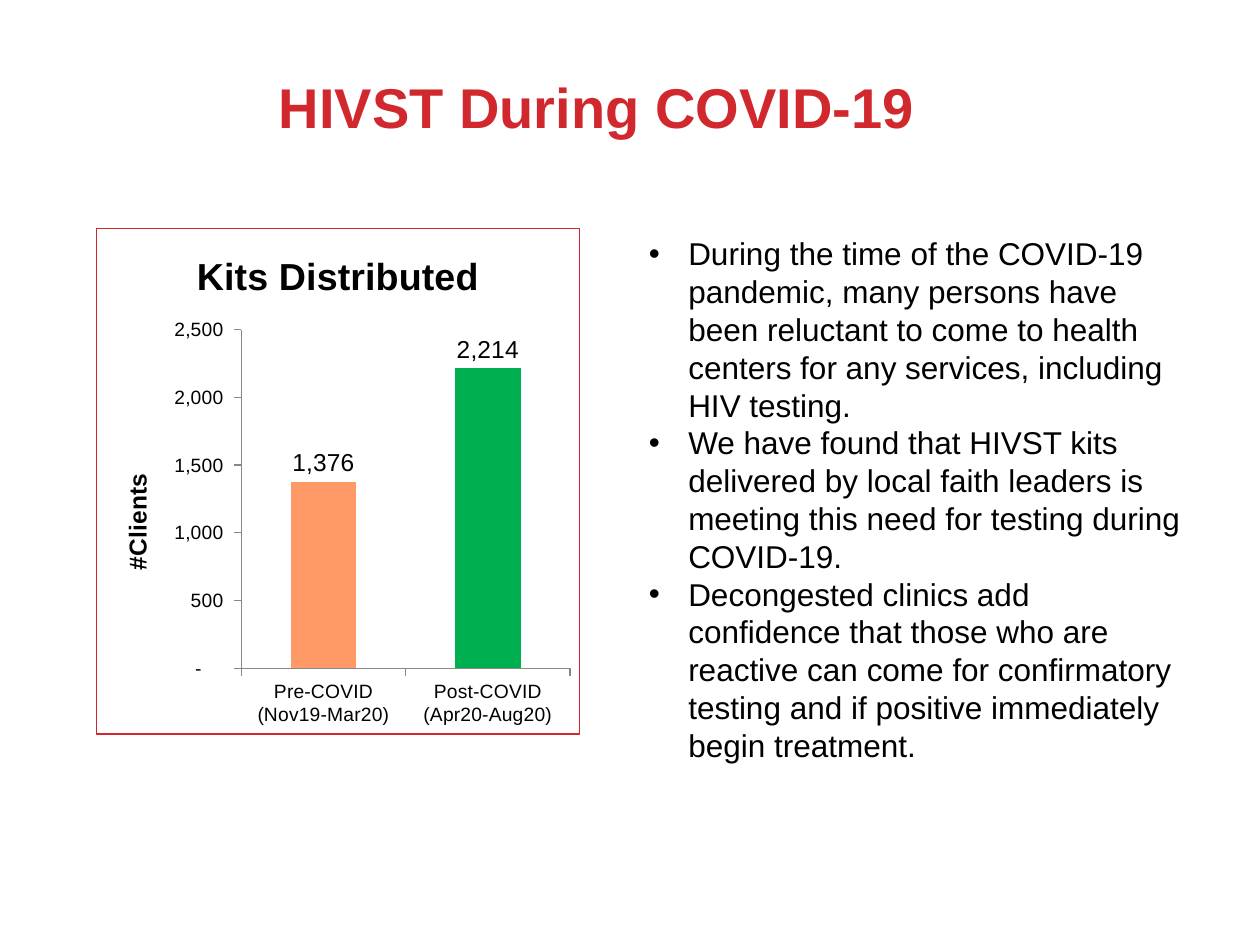
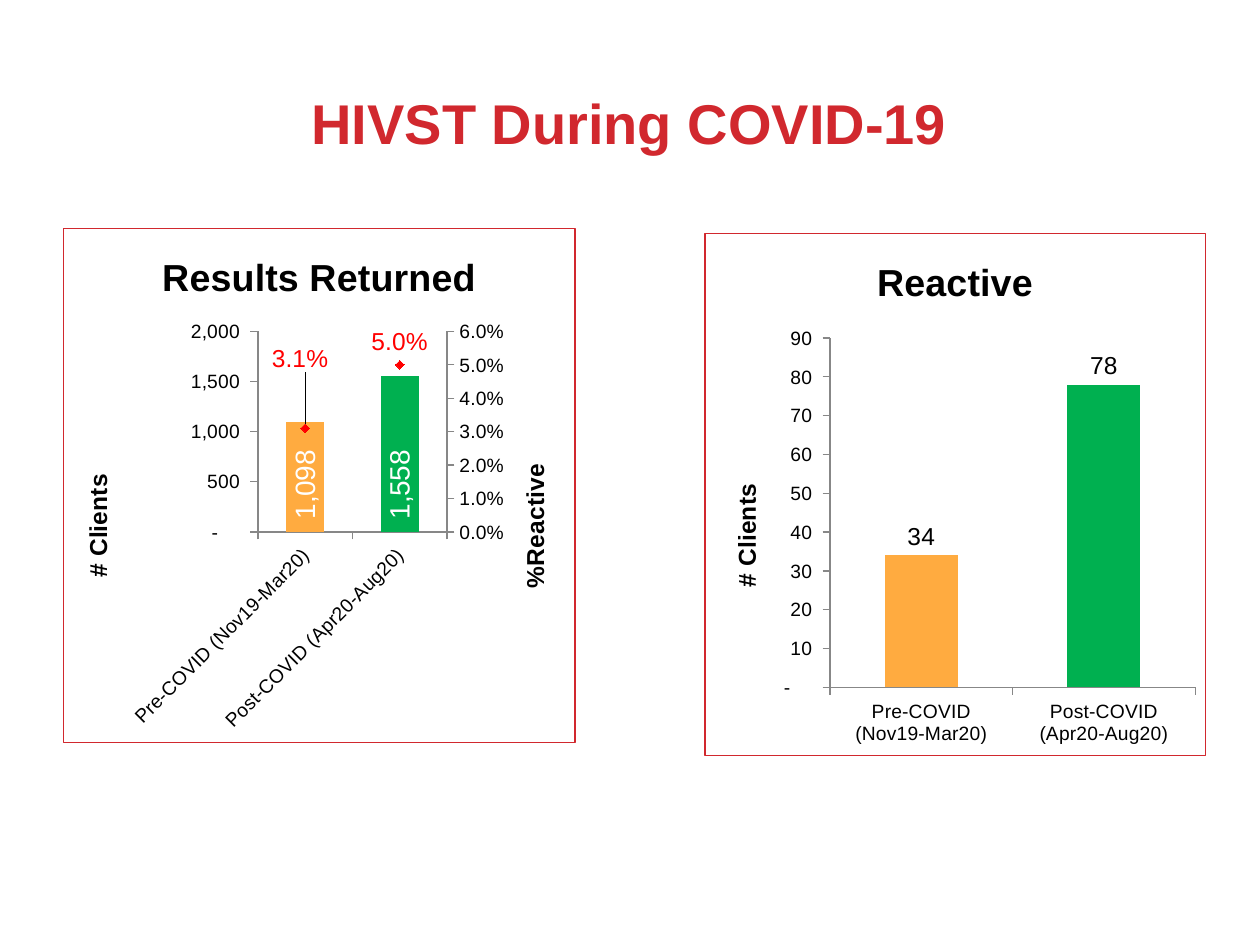
from copy import deepcopy
from pptx import Presentation
from pptx import util as u
from pptx.chart import axis as ax, data
from pptx.dml.color import RGBColor
from pptx.enum import chart as ch, text
from pptx.oxml import ns, parse_xml

Pt = u.Pt
RED = RGBColor(0xD1, 0x28, 0x2E)
ALERT = RGBColor(0xFF, 0, 0)
BLACK = RGBColor(0, 0, 0)
WHITE = RGBColor(255, 255, 255)
GRAY = RGBColor(0x87, 0x87, 0x87)
PEACH = RGBColor(0xFF, 0x99, 0x66)
AMBER = RGBColor(0xFF, 0xAB, 0x40)
GREEN = RGBColor(0, 0xB0, 0x50)
FACE = "Arial"
COUNT = '_(* #,##0_);_(* \\(#,##0\\);_(* "-"??_);_('
RATE = "0.0%"
TERMS = ["Pre-COVID (Nov19-Mar20)", "Post-COVID (Apr20-Aug20)"]
HEAD = "HIVST During COVID-19"
NOTES = [
    "During the time of the COVID-19 pandemic, many persons have been reluctant to come "
    "to health centers for any services, including HIV testing.",
    "We have found that HIVST kits delivered by local faith leaders is meeting this need "
    "for testing during COVID-19.",
    "Decongested clinics add confidence that those who are reactive can come for "
    "confirmatory testing and if positive immediately begin treatment.",
]


def put(item, **vals):
    for name, val in vals.items():
        setattr(item, name, val)


def tag(item, **vals):
    for name, val in vals.items():
        item.set(name, str(val))


def dress(font, size, color=BLACK, bold=False):
    put(font, name=FACE, size=Pt(size), bold=bold)
    font.color.rgb = color


def place(shape, box):
    put(shape, **dict(zip(("left", "top", "width", "height"), map(Pt, box))))


def node(name, body):
    return parse_xml(f'<c:{name} {ns.nsdecls("c", "a")}>{body}</c:{name}>')


def layout(**vals):
    parts = "".join(f'<c:{key} val="{val}"/>' for key, val in vals.items())
    return node("layout", f"<c:manualLayout>{parts}</c:manualLayout>")


def turn(item, deg):
    tag(item.xpath("./c:txPr/a:bodyPr")[0], rot=deg * 60000, vert="horz")


def name_axis(axis, title):
    frame = axis.axis_title.text_frame
    frame.text = title
    dress(frame.paragraphs[0].runs[0].font, 14, bold=True)


class Deck:
    """Holds the deck style and the current slide."""

    def __init__(self):
        self.prs = Presentation()
        put(self.prs, slide_width=Pt(720), slide_height=Pt(540))

    def add(self, kind, box):
        self.slide = self.prs.slides.add_slide(self.prs.slide_layouts[kind])
        title = self.slide.shapes.title
        place(title, box)
        frame = title.text_frame
        put(frame, text=HEAD, word_wrap=True, auto_size=text.MSO_AUTO_SIZE.NONE,
            vertical_anchor=text.MSO_ANCHOR.TOP, margin_left=Pt(7.2), margin_right=Pt(7.2),
            margin_top=Pt(7.2), margin_bottom=Pt(7.2))
        line = frame.paragraphs[0]
        line.alignment = text.PP_ALIGN.CENTER
        dress(line.runs[0].font, 32, RED, True)

    def body(self, items, box):
        holder = self.slide.placeholders[1]
        place(holder, box)
        frame = holder.text_frame
        put(frame, text="\n".join(items), word_wrap=True,
            auto_size=text.MSO_AUTO_SIZE.NONE, vertical_anchor=text.MSO_ANCHOR.TOP)
        for line in frame.paragraphs:
            put(line, space_before=Pt(0), line_spacing=Pt(21.6))
            tag(line._p.get_or_add_pPr(), marL=int(Pt(22.5)), indent=int(Pt(-22.5)))
            dress(line.runs[0].font, 18)

    def chart(self, name, vals, box, plot, label="# Clients", first=AMBER, rates=None):
        table = data.CategoryChartData()
        table.categories = TERMS
        table.add_series(name, vals, COUNT)
        if rates:
            table.add_series("Series 2", rates, RATE)
        chart = self.slide.shapes.add_chart(
            ch.XL_CHART_TYPE.COLUMN_CLUSTERED, *map(Pt, box), table).chart
        dress(chart.font, 18)
        put(chart, has_legend=False, has_title=True)
        frame = chart.chart_title.text_frame
        frame.text = name
        dress(frame.paragraphs[0].runs[0].font, 21.6, bold=True)
        self.border(chart)
        area = chart.element.xpath("//c:plotArea")[0]
        for old in area.xpath("./c:layout"):
            area.remove(old)
        x, y, w, h = plot
        area.insert(0, layout(layoutTarget="inner", xMode="edge", yMode="edge",
                              x=x, y=y, w=w, h=h))
        for axis in (chart.category_axis, chart.value_axis):
            put(axis, has_major_gridlines=False, major_tick_mark=ch.XL_TICK_MARK.OUTSIDE)
            dress(axis.tick_labels.font, 11)
            axis.format.line.color.rgb = GRAY
        put(chart.value_axis.tick_labels, number_format=COUNT, number_format_is_linked=False)
        name_axis(chart.value_axis, label)
        bars = chart.plots[0]
        put(bars, gap_width=150, vary_by_categories=False)
        tally = bars.series[0]
        for spot, color in enumerate((first, GREEN)):
            fill = tally.points[spot].format.fill
            fill.solid()
            fill.fore_color.rgb = color
        ends = ch.XL_LABEL_POSITION
        if rates:
            self.labels(tally, COUNT, ends.INSIDE_BASE, 16, WHITE)
            turn(tally.data_labels._element, -90)
            turn(chart.category_axis._element, -45)
            self.rates(chart, area)
        else:
            self.labels(tally, COUNT, ends.OUTSIDE_END, 14, BLACK)

    def border(self, chart):
        edge = node("spPr", f'<a:noFill/><a:ln w="{int(Pt(0.75))}"><a:solidFill>'
                            f'<a:srgbClr val="{RED}"/></a:solidFill></a:ln>')
        chart.element.xpath("./c:txPr")[0].addprevious(edge)

    def labels(self, series, form, spot, size, color):
        marks = series.data_labels
        put(marks, show_value=True, number_format=form, number_format_is_linked=False,
            position=spot)
        dress(marks.font, size, color)

    def rates(self, chart, area):
        ids = ("91", "92")
        line = node("lineChart", '<c:grouping val="standard"/><c:varyColors val="0"/>'
                    '<c:marker val="1"/>' + "".join(f'<c:axId val="{i}"/>' for i in ids))
        ser = area.xpath("./c:barChart/c:ser")[1]
        for flag in ser.xpath("./c:invertIfNegative"):
            ser.remove(flag)
        line.insert(2, ser)
        area.xpath("./c:barChart")[0].addnext(line)
        base, side = (deepcopy(axis._element)
                      for axis in (chart.category_axis, chart.value_axis))
        area.xpath("./c:valAx")[-1].addnext(side)
        side.addnext(base)
        for item, own, other in ((base, *ids), (side, *reversed(ids))):
            tag(item.xpath("./c:axId")[0], val=own)
            tag(item.xpath("./c:crossAx")[0], val=other)
        tag(base.xpath("./c:delete")[0], val=1)
        tag(side.xpath("./c:axPos")[0], val="r")
        tag(side.xpath("./c:crosses")[0], val="max")
        right = ax.ValueAxis(side)
        put(right.tick_labels, number_format=RATE, number_format_is_linked=False)
        name_axis(right, "%Reactive")
        share = chart.plots[1].series[0]
        share.smooth = False
        share.format.line.fill.background()
        put(share.marker, style=ch.XL_MARKER_STYLE.DIAMOND, size=5)
        look = share.marker.format
        look.fill.solid()
        look.fill.fore_color.rgb = ALERT
        look.line.color.rgb = ALERT
        above = ch.XL_LABEL_POSITION.ABOVE
        self.labels(share, RATE, above, 14, ALERT)
        mark = share.points[0].data_label
        dress(mark.font, 14, ALERT)
        mark.position = above
        shift = layout(x=-0.01, y=-0.09)
        ser.xpath("./c:dLbls/c:dLbl/c:idx")[0].addnext(shift)
        form = node("numFmt", "")
        tag(form, formatCode=RATE, sourceLinked=0)
        shift.addnext(form)


def main():
    deck = Deck()
    deck.add(1, (98, 34, 486, 60.5))
    deck.chart("Kits Distributed", (1376, 2214), (54.7, 130.3, 277, 289.5),
               (0.3, 0.2, 0.68, 0.67), "#Clients", PEACH)
    deck.body(NOTES, (363.6, 130.3, 323.3, 312.5))
    deck.add(5, (116.6, 43.2, 486, 33))
    deck.chart("Results Returned", (1098, 1558), (36, 130.3, 293, 294.5),
               (0.38, 0.2, 0.37, 0.39), rates=(0.031, 0.05))
    deck.chart("Reactive", (34, 78), (402.5, 133.2, 286.6, 298.8),
               (0.25, 0.2, 0.73, 0.67))
    deck.prs.save("out.pptx")


if __name__ == "__main__":
    main()
